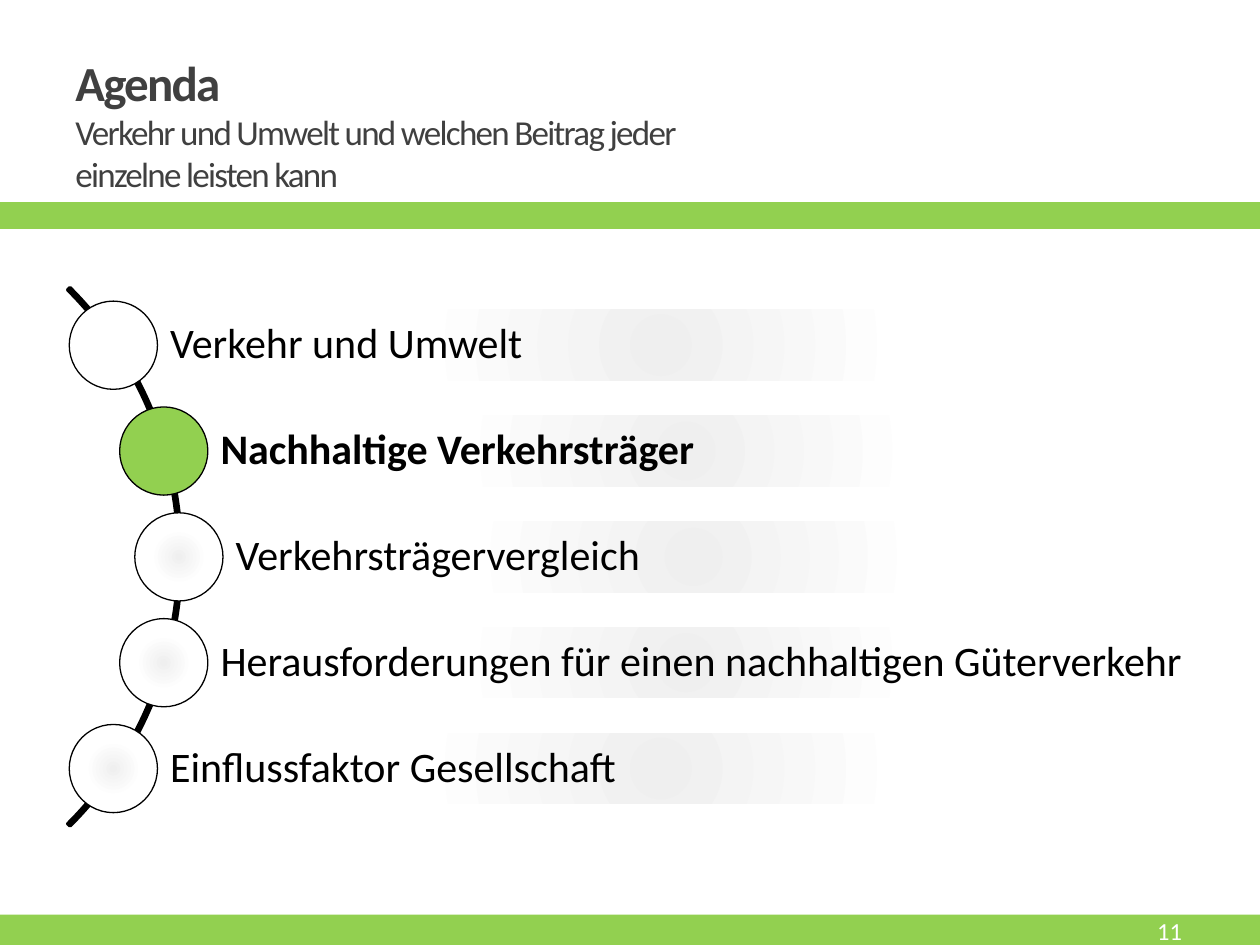
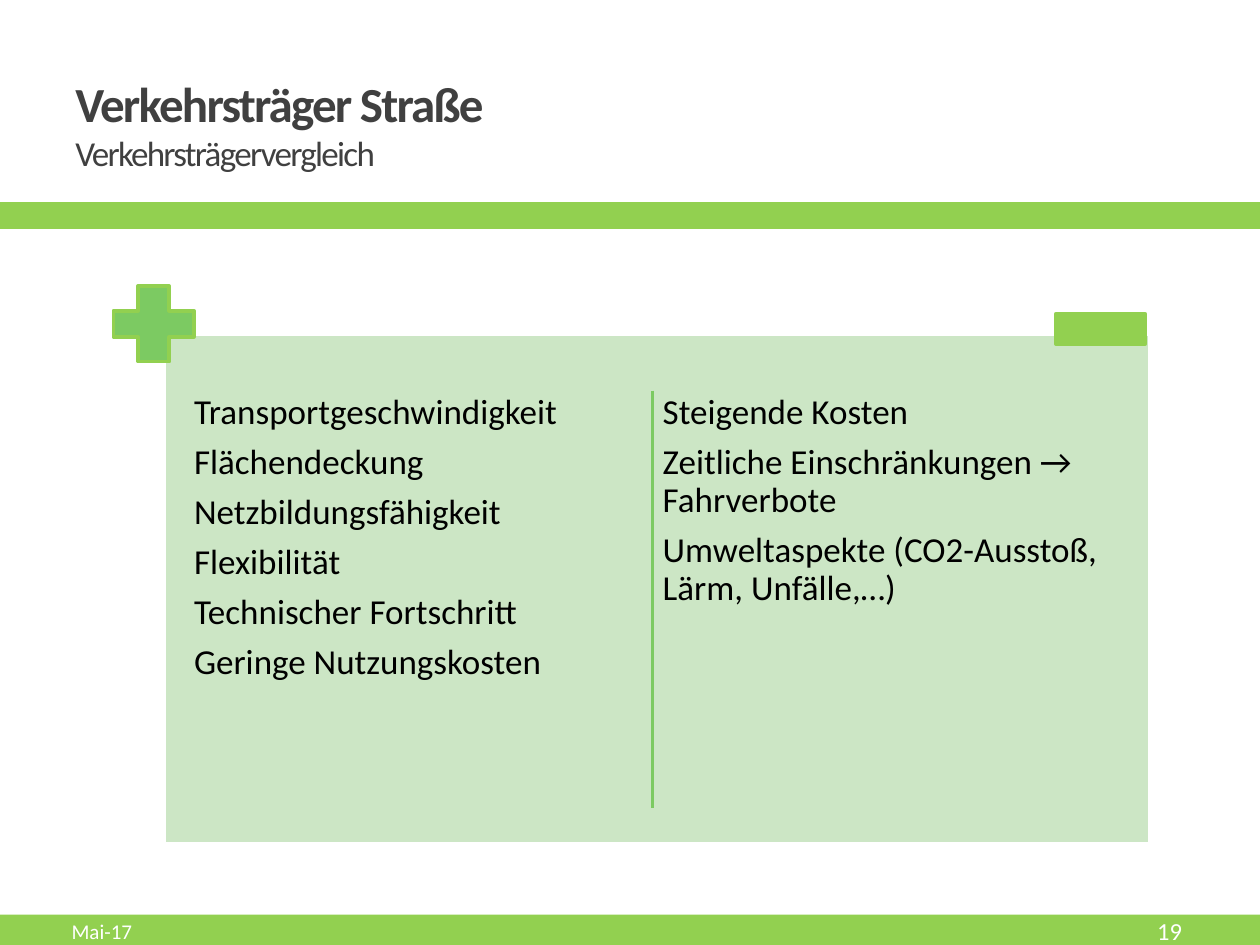
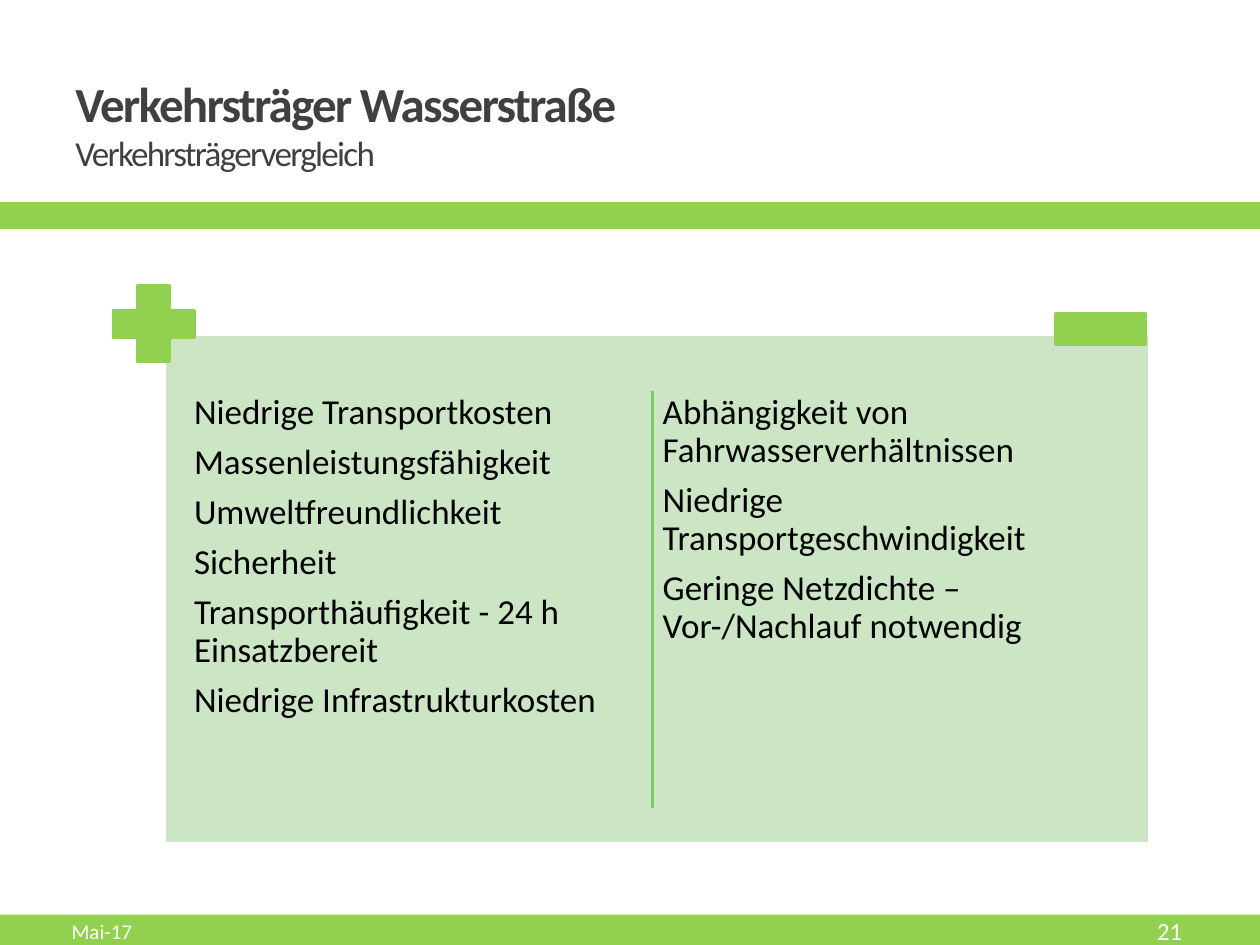
from pptx import Presentation
from pptx.dml.color import RGBColor
from pptx.enum.shapes import MSO_CONNECTOR, MSO_SHAPE
from pptx.enum.text import MSO_ANCHOR, PP_ALIGN
from pptx.oxml import parse_xml
from pptx.oxml.ns import nsdecls, qn
from pptx.util import Inches, Pt

GREEN = RGBColor(0x92, 0xD0, 0x50)
DEEP_GREEN = RGBColor(0x7C, 0xCA, 0x62)
PALE_GREEN = RGBColor(0xCC, 0xE6, 0xC5)
GREY = RGBColor(0x40, 0x40, 0x40)
BLACK = RGBColor(0, 0, 0)
WHITE = RGBColor(0xFF, 0xFF, 0xFF)
GLOW_STOPS = ((0, "EFEFEF"), (45, "FFFFFF"), (100, "FFFFFF"))
GLOW = "glow"
THICK = 2.08

AGENDA = (
    ("Verkehr und Umwelt", 0.9, WHITE),
    ("Nachhaltige Verkehrsträger", 1.3, GREEN),
    ("Verkehrsträgervergleich", 1.42, GLOW),
    ("Herausforderungen für einen nachhaltigen Güterverkehr", 1.3, GLOW),
    ("Einflussfaktor Gesellschaft", 0.9, GLOW),
)

ROAD_PROS = (
    "Transportgeschwindigkeit",
    "Flächendeckung",
    "Netzbildungsfähigkeit",
    "Flexibilität",
    "Technischer Fortschritt",
    "Geringe Nutzungskosten",
)
ROAD_CONS = (
    "Steigende Kosten",
    "Zeitliche Einschränkungen → Fahrverbote",
    "Umweltaspekte (CO2-Ausstoß, Lärm, Unfälle,…)",
)
WATER_PROS = (
    "Niedrige Transportkosten",
    "Massenleistungsfähigkeit",
    "Umweltfreundlichkeit",
    "Sicherheit",
    "Transporthäufigkeit - 24 h Einsatzbereit",
    "Niedrige Infrastrukturkosten",
)
WATER_CONS = (
    "Abhängigkeit von Fahrwasserverhältnissen",
    "Niedrige Transportgeschwindigkeit",
    "Geringe Netzdichte – Vor-/Nachlauf notwendig",
)


def write(paragraph, text, size=20, color=BLACK, bold=False, tracking=0,
          align=PP_ALIGN.LEFT, listed=False):
    paragraph.alignment = align
    if listed:
        paragraph.line_spacing = 0.9
        paragraph.space_after = Pt(0.35 * size)
    run = paragraph.add_run()
    run.text = text
    run.font.name = "Calibri"
    run.font.size = Pt(size)
    run.font.bold = bold
    run.font.color.rgb = color
    if tracking:
        run._r.get_or_add_rPr().set("spc", str(tracking * 100))


def glow_fill():
    stops = "".join(
        f'<a:gs pos="{position * 1000}"><a:srgbClr val="{color}"/></a:gs>'
        for position, color in GLOW_STOPS)
    return parse_xml(
        f'<a:gradFill {nsdecls("a")}><a:gsLst>{stops}</a:gsLst>'
        '<a:path path="circle"><a:fillToRect l="100000" t="100000" '
        'r="100000" b="100000"/></a:path></a:gradFill>')


class Deck:
    def __init__(self):
        self.presentation = Presentation()
        self.presentation.slide_width = Inches(10)
        self.presentation.slide_height = Inches(7.5)
        self.slide = None

    def start(self, title, subtitle, number, date=None):
        blank = self.presentation.slide_layouts[6]
        self.slide = self.presentation.slides.add_slide(blank)
        self.shape(MSO_SHAPE.RECTANGLE, -0.04, 7.26, 10.16, 0.5, GREEN)
        self.shape(MSO_SHAPE.RECTANGLE, 0, 1.62, 10.12, 0.18, GREEN, GREEN)
        heading = self.frame(0.5, 0.44, 5.21, 1.08).paragraphs[0]
        write(heading, title, size=28, color=GREY, bold=True, tracking=-1)
        heading.add_line_break()
        write(heading, subtitle, color=GREY, tracking=-1)
        if date:
            write(self.frame(0.47, 7.21, 3.17, 0.36).paragraphs[0], date,
                  size=12, color=WHITE)
        write(self.frame(8.31, 7.21, 1.17, 0.36).paragraphs[0], number,
              size=14, color=WHITE, align=PP_ALIGN.RIGHT)

    def shape(self, preset, left, top, width, height, fill=None, line=None,
              weight=THICK, adjustments=()):
        shape = self.slide.shapes.add_shape(
            preset, Inches(left), Inches(top), Inches(width), Inches(height))
        shape.shadow.inherit = False
        for index, value in enumerate(adjustments):
            shape.adjustments[index] = value
        if fill is None or fill == GLOW:
            shape.fill.background()
        else:
            shape.fill.solid()
            shape.fill.fore_color.rgb = fill
        if fill == GLOW:
            properties = shape._element.spPr
            properties.replace(properties.find(qn("a:noFill")), glow_fill())
        if line is None:
            shape.line.fill.background()
        else:
            shape.line.color.rgb = line
            shape.line.width = Pt(weight)
        return shape

    def frame(self, left, top, width, height, anchor=MSO_ANCHOR.MIDDLE):
        frame = self.slide.shapes.add_textbox(
            Inches(left), Inches(top), Inches(width), Inches(height)).text_frame
        frame.word_wrap = True
        frame.vertical_anchor = anchor
        return frame

    def column(self, left, points):
        frame = self.frame(left, 3.09, 3.64, 3.46, MSO_ANCHOR.TOP)
        frame.margin_left = frame.margin_right = Inches(0.04)
        frame.margin_top = frame.margin_bottom = Inches(0.04)
        for index, point in enumerate(points):
            paragraph = frame.add_paragraph() if index else frame.paragraphs[0]
            write(paragraph, point, listed=True)

    def divider(self, x, top, bottom):
        divider = self.slide.shapes.add_connector(
            MSO_CONNECTOR.STRAIGHT, Inches(x), Inches(top), Inches(x), Inches(bottom))
        divider.line.color.rgb = DEEP_GREEN
        divider.line.width = Pt(THICK)
        divider._element.spPr.append(parse_xml(f'<a:effectLst {nsdecls("a")}/>'))

    def agenda(self, topics):
        self.shape(MSO_SHAPE.BLOCK_ARC, -4.6, 1.4, 6.04, 6.04, line=BLACK,
                   adjustments=(189, 27, 0.004))
        for row, (topic, left, marker) in enumerate(topics):
            top = 2.46 + 0.84 * row
            bar = self.shape(MSO_SHAPE.RECTANGLE, left, top, 9.59 - left, 0.56, GLOW)
            frame = bar.text_frame
            frame.word_wrap = True
            frame.margin_left = Inches(0.45)
            frame.margin_right = frame.margin_top = frame.margin_bottom = Inches(0.07)
            write(frame.paragraphs[0], topic, size=24, bold=marker == GREEN, listed=True)
            self.shape(MSO_SHAPE.OVAL, left - 0.35, top - 0.07, 0.7, 0.7,
                       marker, BLACK, 0.75)

    def comparison(self, pros, cons, plus_color):
        self.shape(MSO_SHAPE.RECTANGLE, 1.3, 2.65, 7.83, 4.05, PALE_GREEN, WHITE)
        self.column(1.5, pros)
        self.column(5.22, cons)
        self.shape(MSO_SHAPE.CROSS, 0.9, 2.27, 0.64, 0.6, plus_color, GREEN,
                   adjustments=(0.328,))
        self.shape(MSO_SHAPE.RECTANGLE, 8.38, 2.49, 0.71, 0.24, GREEN, GREEN)
        self.divider(5.18, 3.1, 6.41)


def main():
    deck = Deck()
    deck.start("Agenda",
               "Verkehr und Umwelt und welchen Beitrag jeder einzelne leisten kann", "11")
    deck.agenda(AGENDA)
    for mode, number, pros, cons, plus_color in (
        ("Straße", "19", ROAD_PROS, ROAD_CONS, DEEP_GREEN),
        ("Wasserstraße", "21", WATER_PROS, WATER_CONS, GREEN),
    ):
        deck.start(f"Verkehrsträger {mode}", "Verkehrsträgervergleich", number, "Mai-17")
        deck.comparison(pros, cons, plus_color)
    deck.presentation.save("out.pptx")


if __name__ == "__main__":
    main()
